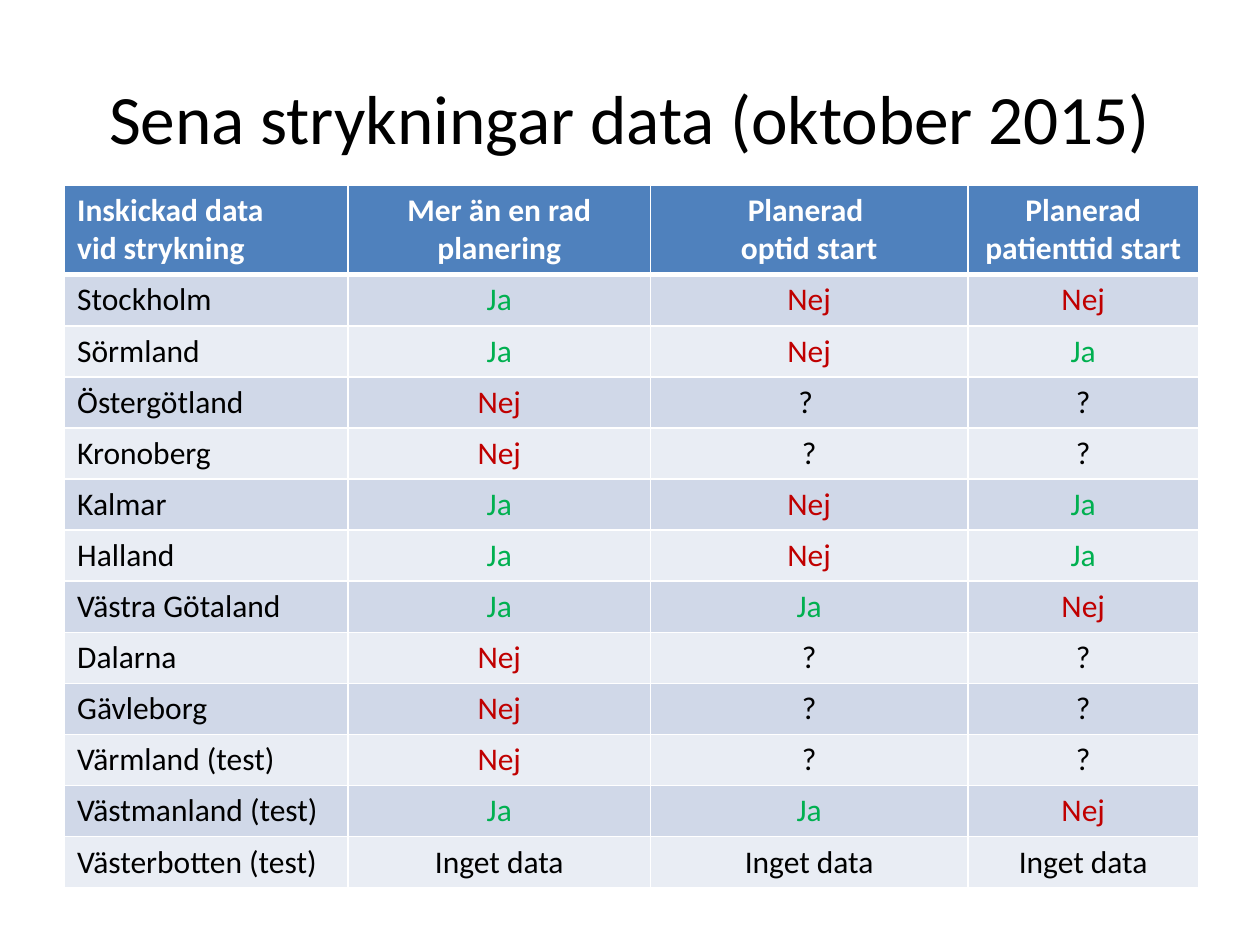
import pptx
import pptx.util
import pptx.dml.color
import pptx.enum.text
import lxml.etree

Pt = pptx.util.Pt
Align = pptx.enum.text.PP_ALIGN

TITLE = "Sena strykningar data (oktober 2015)"
HEADERS = [
    "Inskickad data\nvid strykning",
    "Mer än en rad planering",
    "Planerad \voptid start",
    "Planerad patienttid start",
]
REGIONS = [
    ("Stockholm", "Ja", "Nej", "Nej"),
    ("Sörmland", "Ja", "Nej", "Ja"),
    ("Östergötland", "Nej", "? ", "?"),
    ("Kronoberg", "Nej", "?", "?"),
    ("Kalmar", "Ja", "Nej", "Ja"),
    ("Halland", "Ja", "Nej", "Ja"),
    ("Västra Götaland", "Ja", "Ja", "Nej"),
    ("Dalarna", "Nej", "?", "?"),
    ("Gävleborg", "Nej", "?", "?"),
    ("Värmland (test)", "Nej", "?", "?"),
    ("Västmanland (test)", "Ja", "Ja", "Nej"),
    ("Västerbotten (test)", "Inget data", "Inget data", "Inget data"),
]
THEME = {
    "font": "Calibri",
    "title_size": 39.6,
    "table_size": 18,
    "text": "000000",
    "header_text": "FFFFFF",
    "header_fill": "4F81BD",
    "bands": ("D0D8E8", "E9EDF4"),
    "border": "FFFFFF",
    "answers": {"Ja": "00B050", "Nej": "C00000"},
}
TITLE_BOX = (36, 21.6, 648, 90)
TABLE_LEFT, TABLE_TOP = 36.9, 105.8
COLUMN_WIDTHS = (162, 172.8, 181.4, 131.8)
ROW_HEIGHT = 29.2


def rgb(value):
    return pptx.dml.color.RGBColor.from_string(value)


def format_text(text_frame, size, color, bold, alignment):
    for paragraph in text_frame.paragraphs:
        paragraph.alignment = alignment
        for run in paragraph.runs:
            run.font.name = THEME["font"]
            run.font.size = Pt(size)
            run.font.bold = bold
            run.font.color.rgb = rgb(color)


def add_borders(cell, bottom_width):
    properties = cell._tc.get_or_add_tcPr()
    namespace = "{http://schemas.openxmlformats.org/drawingml/2006/main}"
    for side, width in (("L", 1), ("R", 1), ("T", 1), ("B", bottom_width)):
        line = lxml.etree.SubElement(properties, f"{namespace}ln{side}", w=str(Pt(width)))
        fill = lxml.etree.SubElement(line, f"{namespace}solidFill")
        lxml.etree.SubElement(fill, f"{namespace}srgbClr", val=THEME["border"])


def fill_cell(cell, text, row, column):
    is_header = row == 0
    if is_header:
        fill, color = THEME["header_fill"], THEME["header_text"]
    else:
        fill = THEME["bands"][(row - 1) % 2]
        color = THEME["answers"].get(text, THEME["text"])
    cell.text_frame.text = text
    alignment = Align.LEFT if column == 0 else Align.CENTER
    format_text(cell.text_frame, THEME["table_size"], color, is_header, alignment)
    if is_header:
        add_borders(cell, 3)
    elif row > 1:
        add_borders(cell, 1)
    cell.fill.solid()
    cell.fill.fore_color.rgb = rgb(fill)


def add_title(slide):
    title = slide.shapes.title
    title.left, title.top, title.width, title.height = map(Pt, TITLE_BOX)
    title.text_frame.text = TITLE
    title.text_frame.vertical_anchor = pptx.enum.text.MSO_ANCHOR.MIDDLE
    format_text(title.text_frame, THEME["title_size"], THEME["text"], False, Align.CENTER)


def add_region_table(slide):
    rows = [HEADERS, *REGIONS]
    table = slide.shapes.add_table(
        len(rows), len(HEADERS), Pt(TABLE_LEFT), Pt(TABLE_TOP),
        Pt(sum(COLUMN_WIDTHS)), Pt(ROW_HEIGHT * len(rows)),
    ).table
    for column, width in zip(table.columns, COLUMN_WIDTHS):
        column.width = Pt(width)
    for row_index, texts in enumerate(rows):
        table.rows[row_index].height = Pt(ROW_HEIGHT)
        for column_index, text in enumerate(texts):
            fill_cell(table.cell(row_index, column_index), text, row_index, column_index)


def main():
    presentation = pptx.Presentation()
    presentation.slide_width, presentation.slide_height = Pt(720), Pt(540)
    slide = presentation.slides.add_slide(presentation.slide_layouts[5])
    add_title(slide)
    add_region_table(slide)
    presentation.save("out.pptx")


if __name__ == "__main__":
    main()
